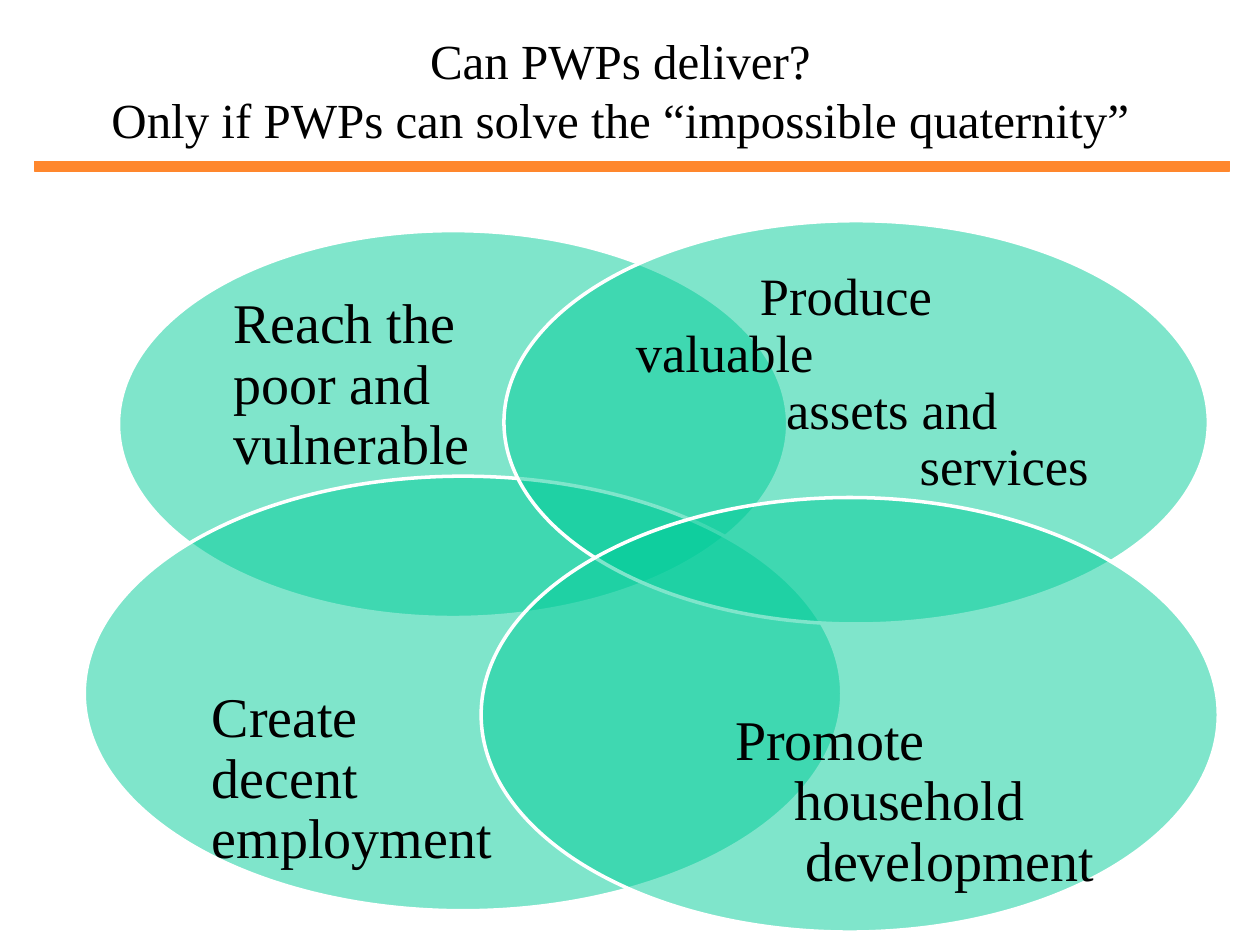
from lxml import etree
from pptx import Presentation
from pptx.dml.color import RGBColor
from pptx.enum.shapes import MSO_SHAPE
from pptx.enum.text import MSO_ANCHOR, MSO_AUTO_SIZE, PP_ALIGN
from pptx.oxml.ns import qn
from pptx.util import Cm, Pt

FONT = "Times New Roman"
COLORS = {"text": "000000", "oval": "00CC99", "outline": "FFFFFF", "rule": "FF872D"}
OPACITY = 50  # percent
INSET = 0.33

TITLE = "Can PWPs deliver?\vOnly if PWPs can solve the “impossible quaternity”"

# Back to front; boxes are left, top, width, height in cm, each line has its indent in cm
GOALS = [
    {"oval": (2.39, 4.65, 13.49, 7.8), "text": (4.37, 5.95, 9.53), "size": 32,
     "lines": [("Reach the", 0), ("poor and", 0), ("vulnerable", 0)]},
    {"oval": (1.7, 9.6, 15.27, 8.76), "text": (3.94, 13.9, 10.8), "size": 32,
     "lines": [("Create", 0), ("decent", 0), ("employment", 0)]},
    {"oval": (10.16, 4.45, 14.2, 8.13), "text": (12.24, 5.45, 10.6), "size": 30,
     "lines": [("Produce", 2.75), ("valuable", 0.25), ("assets and", 3.28), ("services", 5.97)]},
    {"oval": (9.7, 10.03, 14.86, 8.76), "text": (11.89, 14.35, 11), "size": 32,
     "lines": [("Promote", 2.6), ("household", 3.79), ("development", 4.01)]},
]


def rgb(name):
    return RGBColor.from_string(COLORS[name])


def style(p, size):
    p.font.name = FONT
    p.font.size = Pt(size)
    p.font.color.rgb = rgb("text")


def add_filled(s, kind, box, fill, line, width):
    sp = s.shapes.add_shape(kind, *map(Cm, box))
    sp.shadow.inherit = False
    sp.fill.solid()
    sp.fill.fore_color.rgb = rgb(fill)
    sp.line.color.rgb = rgb(line)
    sp.line.width = Pt(width)
    return sp


def add_oval(s, box):
    sp = add_filled(s, MSO_SHAPE.OVAL, box, "oval", "outline", 2)
    color = sp.fill._xPr.find(qn("a:solidFill"))[0]
    etree.SubElement(color, qn("a:alpha"), val=str(OPACITY * 1000))


def add_label(s, box, size, lines):
    left, top, width = box
    height = Pt(size * 1.08 * len(lines))
    tf = s.shapes.add_textbox(Cm(left), Cm(top), Cm(width), height).text_frame
    tf.word_wrap = True
    tf.margin_left, tf.margin_right = Cm(INSET), 0
    tf.margin_top = tf.margin_bottom = 0
    for i, (text, indent) in enumerate(lines):
        p = tf.add_paragraph() if i else tf.paragraphs[0]
        p.text = text
        p.line_spacing = 0.9
        p._p.get_or_add_pPr().set("marL", str(Cm(indent)))
        style(p, size)


prs = Presentation()
prs.slide_width, prs.slide_height = Cm(25.4), Cm(19.05)
s = prs.slides.add_slide(prs.slide_layouts[5])

# Title
title = s.shapes.title
title.left, title.top, title.width, title.height = map(Cm, (0.3, 0.91, 24.41, 1.8))
tf = title.text_frame
tf.text = TITLE
tf.word_wrap = True
tf.auto_size = MSO_AUTO_SIZE.NONE
tf.vertical_anchor = MSO_ANCHOR.MIDDLE
tf.paragraphs[0].alignment = PP_ALIGN.CENTER
style(tf.paragraphs[0], 28)

# Overlapping goals
for goal in GOALS:
    add_oval(s, goal["oval"])
    add_label(s, goal["text"], goal["size"], goal["lines"])

# Rule under the title
add_filled(s, MSO_SHAPE.RECTANGLE, (0.69, 3.25, 24.1, 0.2), "rule", "rule", 0.75)

prs.save("out.pptx")
